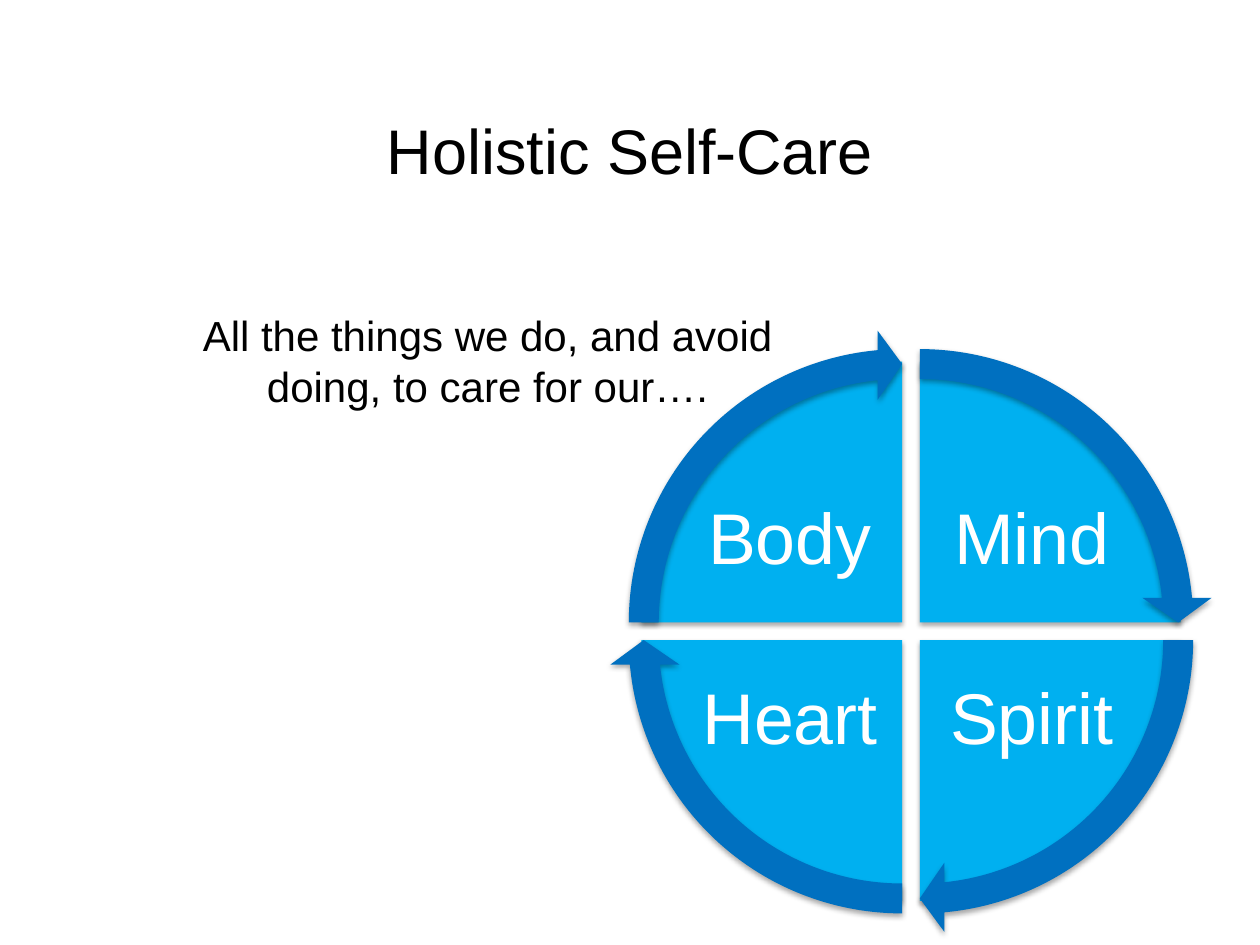
from lxml import etree
from pptx import Presentation
from pptx.dml.color import RGBColor
from pptx.enum.shapes import MSO_SHAPE
from pptx.enum.text import MSO_ANCHOR, PP_ALIGN
from pptx.oxml.ns import qn
from pptx.util import Inches, Pt

CENTER = PP_ALIGN.CENTER
TOP = MSO_ANCHOR.TOP
MIDDLE = MSO_ANCHOR.MIDDLE
CIRCULAR_ARROW = MSO_SHAPE.CIRCULAR_ARROW

COLORS = {"text": "000000", "label": "FFFFFF", "quarter": "00B0F0",
          "arrow": "0070C0", "shadow": "000000"}
FONT = "Arial"

TITLE = "Holistic Self-Care"
INTRO = "All the things we do, and avoid doing, to care for our…."
QUARTERS = [("Mind", 1, -1), ("Spirit", 1, 1), ("Heart", -1, 1), ("Body", -1, -1)]

WHEEL_X, WHEEL_Y = 7.23, 5.01
GAP = 0.07
RADIUS = 2.07
ARROW_SIZE = 4.65
INNER_X, OUTER_X = 2.22, 0.44
INNER_Y, OUTER_Y = 2.2, 0.91


def set_text(shape, text, size, color="text", anchor=TOP, margins=(0.1, 0.05, 0.1, 0.05),
             line_spacing=None):
    frame = shape.text_frame
    frame.word_wrap = True
    frame.vertical_anchor = anchor
    (frame.margin_left, frame.margin_top,
     frame.margin_right, frame.margin_bottom) = map(Inches, margins)
    paragraph = frame.paragraphs[0]
    paragraph.alignment = CENTER
    paragraph.line_spacing = line_spacing
    run = paragraph.add_run()
    run.text = text
    run.font.name = FONT
    run.font.size = Pt(size)
    run.font.color.rgb = RGBColor.from_string(COLORS[color])


def style_shape(shape, color):
    shape.fill.solid()
    shape.fill.fore_color.rgb = RGBColor.from_string(COLORS[color])
    shape.line.fill.background()
    shape.shadow.inherit = False
    effects = shape._element.spPr.find(qn("a:effectLst"))
    shadow = etree.SubElement(effects, qn("a:outerShdw"), blurRad=str(Pt(3.1)),
                              dist=str(Pt(1.8)), dir="5400000", rotWithShape="0")
    shadow_color = etree.SubElement(shadow, qn("a:srgbClr"), val=COLORS["shadow"])
    etree.SubElement(shadow_color, qn("a:alpha"), val="35000")


def build_quarter(shapes, index, x, y):
    radius = Inches(RADIUS)
    directions = [(0, -1), (1, 0), (0, 1), (-1, 0)]
    ends = [(x + radius * across, y + radius * down)
            for across, down in (directions[index], directions[(index + 1) % 4])]
    builder = shapes.build_freeform(x - radius, y - radius)
    builder.move_to(x + radius, y + radius)
    builder.move_to(x, y)
    builder.add_line_segments(ends, close=True)
    quarter = builder.convert_to_shape()

    outline = quarter._element.spPr.find(".//" + qn("a:path"))
    for corner in outline.findall(qn("a:moveTo"))[:2]:
        outline.remove(corner)
    chord = outline.findall(qn("a:lnTo"))[1]
    arc = etree.Element(qn("a:arcTo"), wR=str(radius), hR=str(radius),
                        stAng=str((270 + 90 * index) % 360 * 60000), swAng="5400000")
    outline.replace(chord, arc)
    return quarter


def add_quarter(shapes, index, label, side_x, side_y):
    quarter = build_quarter(shapes, index, Inches(WHEEL_X + side_x * GAP),
                            Inches(WHEEL_Y + side_y * GAP))
    style_shape(quarter, "quarter")
    left, right = (INNER_X, OUTER_X) if side_x > 0 else (OUTER_X, INNER_X)
    top, bottom = (INNER_Y, OUTER_Y) if side_y > 0 else (OUTER_Y, INNER_Y)
    set_text(quarter, label, 41, color="label", anchor=MIDDLE,
             margins=(left, top, right, bottom), line_spacing=0.9)


def add_arrow(shapes, index, side_x, side_y):
    left = WHEEL_X + side_x * GAP - ARROW_SIZE / 2
    top = WHEEL_Y + side_y * GAP - ARROW_SIZE / 2
    arrow = shapes.add_shape(CIRCULAR_ARROW, Inches(left), Inches(top),
                             Inches(ARROW_SIZE), Inches(ARROW_SIZE))
    start = (162 + 54 * index) % 216
    for position, value in enumerate((0.051, 3.275, start + 50.725, start, 0.059)):
        arrow.adjustments[position] = value
    style_shape(arrow, "arrow")


def main():
    presentation = Presentation()
    presentation.slide_width, presentation.slide_height = Inches(10), Inches(7.5)
    slide = presentation.slides.add_slide(presentation.slide_layouts[5])

    title = slide.shapes.title
    title.left, title.top = Inches(0.5), Inches(0.83)
    title.width, title.height = Inches(9), Inches(1.08)
    set_text(title, TITLE, 36, anchor=MIDDLE, margins=(0.1, 0.05, 0.1, 0.42))

    wheel = slide.shapes.add_group_shape().shapes
    for index, (label, side_x, side_y) in enumerate(QUARTERS):
        add_quarter(wheel, index, label, side_x, side_y)
    for index, (_, side_x, side_y) in enumerate(QUARTERS):
        add_arrow(wheel, index, side_x, side_y)

    intro = slide.shapes.add_textbox(Inches(1.33), Inches(2.41), Inches(5.08), Inches(0.91))
    set_text(intro, INTRO, 24)

    presentation.save("out.pptx")


if __name__ == "__main__":
    main()
